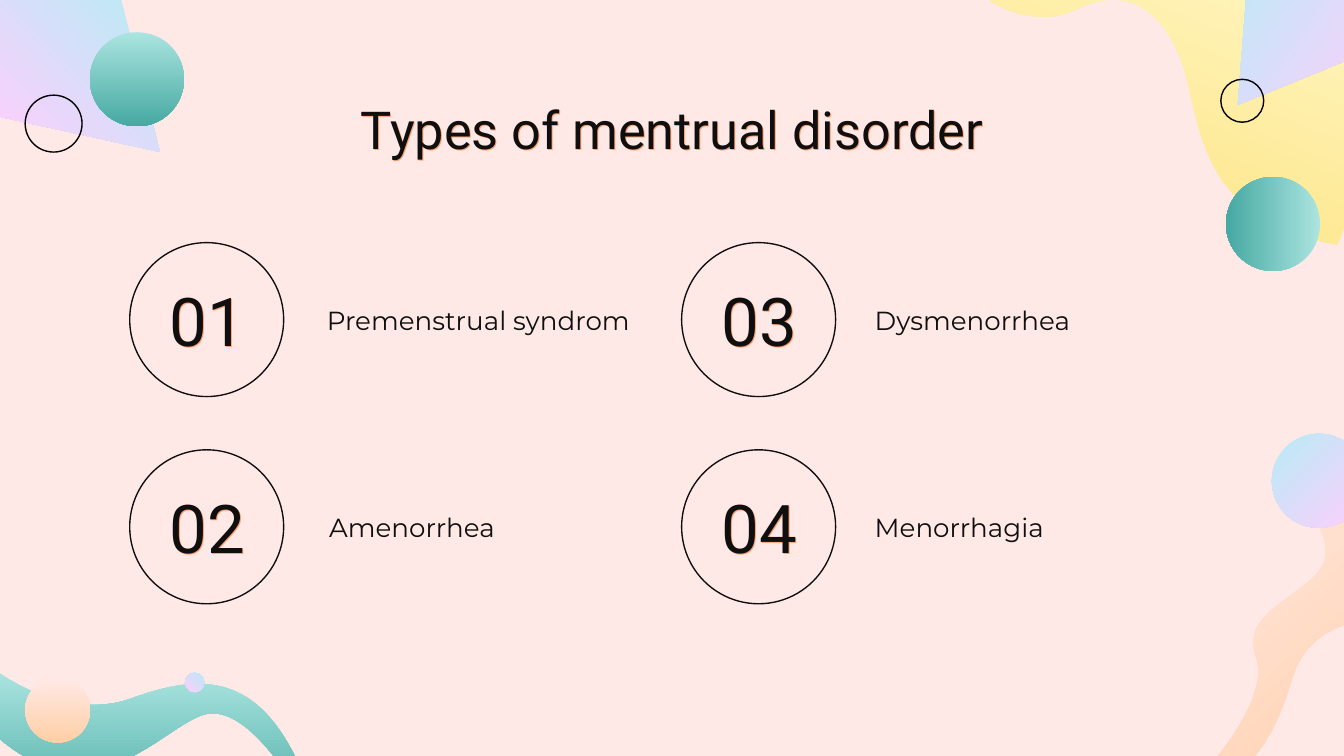
import pptx
import pptx.dml.color
import pptx.enum.shapes
import pptx.enum.text
import pptx.oxml
import pptx.oxml.ns
import pptx.util

Pt = pptx.util.Pt
RGBColor = pptx.dml.color.RGBColor
Align = pptx.enum.text.PP_ALIGN

BLUSH = RGBColor(0xFF, 0xE9, 0xE6)
INK = RGBColor(0x0F, 0x0F, 0x0F)
BLACK = RGBColor(0, 0, 0)
GLOW = RGBColor(0xFF, 0xA0, 0x70)
PEACH = (BLUSH, RGBColor(0xFF, 0xCF, 0xA6))
LILAC = (RGBColor(0xB8, 0xEB, 0xF6), RGBColor(0xFF, 0xCE, 0xFD))
TEAL = (RGBColor(0xAB, 0xE4, 0xE0), RGBColor(0x46, 0xA9, 0xA2))
YELLOW = (RGBColor(0xFD, 0xF9, 0xCF), RGBColor(0xFF, 0xE3, 0x7E))

# Each step holds one point (a line) or three points (a Bezier curve).
PEACH_RIBBON = [
    (697, 269.3),
    (697, 269.3, 722.2, 293, 703.4, 309.6),
    (684.7, 326.2, 666, 331.2, 673.2, 352.8),
    (679.7, 373.7, 651.6, 406, 651.6, 406),
    (660.2, 416.2),
    (660.2, 416.2, 680.4, 404.6, 691.2, 366.5),
    (702, 328.3, 732.2, 337.7, 745.2, 322.6),
    (757.4, 307.4, 756.7, 285.8, 756.7, 285.8),
    (722.2, 247),
]
TEAL_WAVE = [
    (0, 360.7),
    (0, 360.7, 34.6, 386.6, 69.8, 374.4),
    (105.1, 361.4, 135.4, 359.3, 158.4, 406),
    (158.4, 422.6),
    (158.4, 422.6, 134.6, 379.4, 111.6, 382.3),
    (89.3, 385.9, 52.6, 439.9, 0, 396),
]
YELLOW_BLOB = [
    (755.3, 33.8),
    (716.4, 131),
    (643, 118.1, 643.7, 68.4, 634.3, 36.7),
    (623.5, 3.6, 602.6, -7.2, 578.2, 4.3),
    (553.7, 16.6, 531.4, 0.7, 530.6, 0.7),
    (550.1, -47.5),
]
LEFT_TRIANGLE = [(0, 62.6), (85.7, 81.4), (64.8, 0), (0, 0)]
RIGHT_TRIANGLE = [(744.5, 23), (663.1, 56.2), (669.6, -27.4), (733.7, -38.2)]

# Outline, gradient colours, clockwise gradient angle
BLOBS = [
    (PEACH_RIBBON, PEACH, 48),
    (LEFT_TRIANGLE, LILAC, 135),
    (TEAL_WAVE, TEAL, 90),
    (YELLOW_BLOB, YELLOW, 112),
    (RIGHT_TRIANGLE, LILAC, 35),
]
# Left, top, diameter, gradient colours, clockwise gradient angle
BALLS = [
    (681.4, 232.4, 50.4, LILAC, 45),
    (13.5, 363, 34.8, PEACH, 90),
    (99.1, 360.4, 10.5, LILAC, 135),
    (656.8, 94.8, 50.4, TEAL, 180),
    (48.2, 17.3, 50.4, TEAL, 90),
]
RINGS = [(13.5, 51, 30.5), (654, 42.5, 23)]

# Disorder and left edge of its label, column by column
DISORDERS = [
    ("Premenstrual syndrom", 168),
    ("Amenorrhea", 169.2),
    ("Dysmenorrhea", 461.5),
    ("Menorrhagia", 461.5),
]
GRID_LEFT, GRID_TOP = 69.5, 130
COLUMN_STEP, ROW_STEP = 295.7, 111
RING_SIZE = 82.5
LABEL_HEIGHT = 38


def paint_gradient(shape, colours, angle):
    shape.shadow.inherit = False
    shape.line.fill.background()
    shape.fill.gradient()
    shape.fill.gradient_angle = 360 - angle
    for stop, colour in zip(shape.fill.gradient_stops, colours):
        stop.color.rgb = colour


def bend_outline(shape, steps):
    """Join the three line segments of each curve step into one Bezier segment."""
    lines = iter(shape._element.findall(".//" + pptx.oxml.ns.qn("a:lnTo")))
    for step in steps[1:]:
        if len(step) == 2:
            next(lines)
            continue
        curve = pptx.oxml.parse_xml(f'<a:cubicBezTo {pptx.oxml.ns.nsdecls("a")}/>')
        segments = [next(lines) for _ in range(3)]
        segments[0].addprevious(curve)
        for segment in segments:
            curve.append(segment[0])
            segment.getparent().remove(segment)


def add_blob(slide, steps, colours, angle):
    points = [(Pt(x), Pt(y)) for step in steps for x, y in zip(step[::2], step[1::2])]
    builder = slide.shapes.build_freeform(*points[0])
    builder.add_line_segments(points[1:], close=True)
    blob = builder.convert_to_shape()
    bend_outline(blob, steps)
    paint_gradient(blob, colours, angle)


def add_circle(slide, left, top, size):
    return slide.shapes.add_shape(
        pptx.enum.shapes.MSO_SHAPE.OVAL, Pt(left), Pt(top), Pt(size), Pt(size))


def add_ring(slide, left, top, size, colour):
    ring = add_circle(slide, left, top, size)
    ring.shadow.inherit = False
    ring.fill.background()
    ring.line.color.rgb = colour
    ring.line.width = Pt(0.75)


def write_text(box, text, size, font, align=Align.LEFT):
    frame = box.text_frame
    frame.word_wrap = True
    frame.auto_size = pptx.enum.text.MSO_AUTO_SIZE.NONE
    frame.vertical_anchor = pptx.enum.text.MSO_ANCHOR.MIDDLE
    frame.margin_left = frame.margin_right = Pt(7.2)
    frame.margin_top = frame.margin_bottom = Pt(7.2)
    para = frame.paragraphs[0]
    para.alignment = align
    span = para.add_run()
    span.text = text
    span.font.size = Pt(size)
    span.font.name = font
    span.font.color.rgb = INK


def add_glow(box):
    """Give the text of an unfilled box a small warm shadow."""
    box.fill.background()
    box._element.spPr.append(pptx.oxml.parse_xml(
        f'<a:effectLst {pptx.oxml.ns.nsdecls("a")}>'
        '<a:outerShdw dist="9525" dir="2700000" algn="bl" rotWithShape="0">'
        f'<a:srgbClr val="{GLOW}"/></a:outerShdw></a:effectLst>'))


def add_title(slide, text):
    title = slide.shapes.title
    title.left, title.top, title.width, title.height = Pt(56.5), Pt(46), Pt(607), Pt(45.5)
    write_text(title, text, 28, "Roboto", Align.CENTER)
    add_glow(title)


def add_disorder(slide, index, name, label_left):
    column, row = divmod(index, 2)
    left = GRID_LEFT + column * COLUMN_STEP
    top = GRID_TOP + row * ROW_STEP
    add_ring(slide, left, top, RING_SIZE, INK)
    number = slide.shapes.add_textbox(Pt(left + 4), Pt(top + 2.5), Pt(75), Pt(77.5))
    write_text(number, f"{index + 1:02}", 36, "Roboto", Align.CENTER)
    add_glow(number)
    label_top = top + (RING_SIZE - LABEL_HEIGHT) / 2
    label = slide.shapes.add_textbox(
        Pt(label_left), Pt(label_top), Pt(190), Pt(LABEL_HEIGHT))
    write_text(label, name, 14, "Montserrat")


def main():
    deck = pptx.Presentation()
    deck.slide_width, deck.slide_height = Pt(720), Pt(405)
    slide = deck.slides.add_slide(deck.slide_layouts[5])
    slide.background.fill.solid()
    slide.background.fill.fore_color.rgb = BLUSH
    for steps, colours, angle in BLOBS:
        add_blob(slide, steps, colours, angle)
    for left, top, size, colours, angle in BALLS:
        paint_gradient(add_circle(slide, left, top, size), colours, angle)
    for left, top, size in RINGS:
        add_ring(slide, left, top, size, BLACK)
    add_title(slide, "Types of mentrual disorder")
    for index, (name, label_left) in enumerate(DISORDERS):
        add_disorder(slide, index, name, label_left)
    deck.save("out.pptx")


if __name__ == "__main__":
    main()
